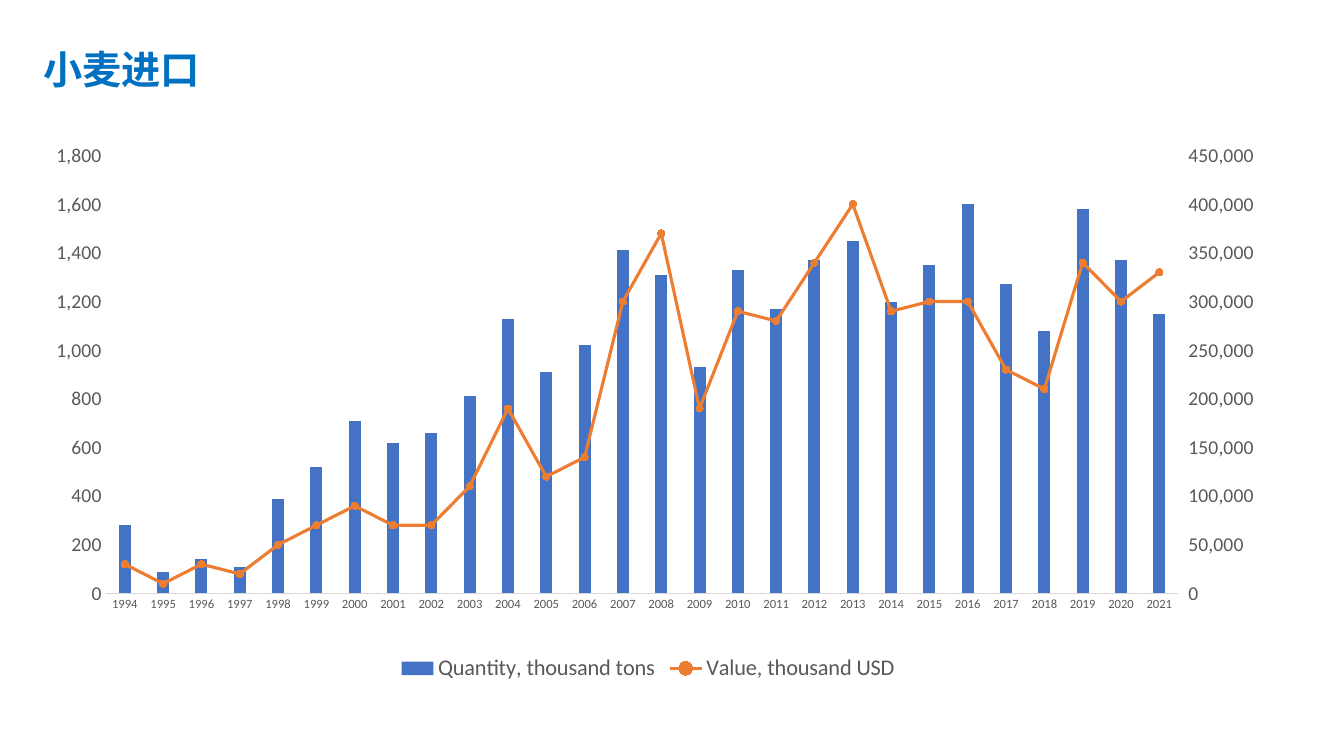
import copy

import pptx
import pptx.chart.axis
import pptx.chart.data
import pptx.dml.color
import pptx.enum.chart
import pptx.enum.text
import pptx.oxml
import pptx.oxml.ns
import pptx.util

Pt = pptx.util.Pt
qn = pptx.oxml.ns.qn
Tick = pptx.enum.chart.XL_TICK_MARK

YEARS = [str(year) for year in range(1994, 2022)]
TONS = [280, 90, 140, 110, 390, 520, 710, 620, 660, 810, 1130, 910, 1020, 1410,
        1310, 930, 1330, 1170, 1370, 1450, 1200, 1350, 1600, 1270, 1080, 1580,
        1370, 1150]
USD = [30000, 10000, 30000, 20000, 50000, 70000, 90000, 70000, 70000, 110000,
       190000, 120000, 140000, 300000, 370000, 190000, 290000, 280000, 340000,
       400000, 290000, 300000, 300000, 230000, 210000, 340000, 300000, 330000]


def rgb(code):
    return pptx.dml.color.RGBColor.from_string(code)


def assign(target, values):
    for name, value in values.items():
        setattr(target, name, value)


class ImportSlide:
    """Holds the style of the deck and the slide being built."""

    blue, orange, heading = "4472C4", "ED7D31", "0070C0"
    grey, rule = "595959", "D9D9D9"
    latin, chinese = "Calibri", "Noto Sans CJK SC"

    def __init__(self, deck):
        self.slide = deck.slides.add_slide(deck.slide_layouts[5])

    def font(self, font, size, color, **extra):
        assign(font, {"size": Pt(size), "name": self.latin, **extra})
        font.color.rgb = rgb(color)

    def title(self, wording, left, top, width, height):
        heading = self.slide.shapes.title
        assign(heading, {"left": Pt(left), "top": Pt(top),
                         "width": Pt(width), "height": Pt(height)})
        frame = heading.text_frame
        frame.text = wording
        assign(frame, {"word_wrap": False,
                       "auto_size": pptx.enum.text.MSO_AUTO_SIZE.NONE,
                       "vertical_anchor": pptx.enum.text.MSO_ANCHOR.MIDDLE})
        frame.paragraphs[0].alignment = pptx.enum.text.PP_ALIGN.LEFT
        run = frame.paragraphs[0].runs[0]
        self.font(run.font, 28, self.heading, name=self.chinese, bold=True)
        east_asian = pptx.oxml.parse_xml(
            f'<a:ea {pptx.oxml.ns.nsdecls("a")} typeface="{self.chinese}"/>')
        run._r.get_or_add_rPr().append(east_asian)

    def chart(self, bars, line, left, top, width, height):
        data = pptx.chart.data.CategoryChartData(number_format="#,##0")
        data.categories = YEARS
        for name, values in (bars, line):
            data.add_series(name, values)
        chart = self.slide.shapes.add_chart(
            pptx.enum.chart.XL_CHART_TYPE.COLUMN_CLUSTERED,
            Pt(left), Pt(top), Pt(width), Pt(height), data).chart
        assign(chart, {"has_title": False, "has_legend": True})
        self.font(chart.font, 10, "000000")
        assign(chart.legend, {
            "position": pptx.enum.chart.XL_LEGEND_POSITION.BOTTOM,
            "include_in_layout": False})
        self.font(chart.legend.font, 16, self.grey)
        self.year_axis(chart.category_axis)
        self.amount_axis(chart.value_axis, 1800, 200, Tick.NONE)
        plot_area = chart.element.find(".//" + qn("c:plotArea"))
        self.split_line(plot_area)
        self.place_plot(plot_area, x=0.05, y=0.03, w=0.89, h=0.8)
        columns, trend = chart.plots
        assign(columns, {"gap_width": 219, "overlap": -27,
                         "vary_by_categories": False})
        self.fill(columns.series[0].format, self.blue)
        self.trend(trend.series[0])

    def fill(self, target, color):
        target.fill.solid()
        target.fill.fore_color.rgb = rgb(color)

    def stroke(self, target, color, width):
        target.line.color.rgb = rgb(color)
        target.line.width = Pt(width)

    def year_axis(self, axis):
        assign(axis, {"major_tick_mark": Tick.NONE, "minor_tick_mark": Tick.NONE,
                      "has_major_gridlines": False})
        self.font(axis.tick_labels.font, 9, self.grey)
        self.stroke(axis.format, self.rule, 0.75)

    def amount_axis(self, axis, top, step, tick):
        assign(axis, {"minimum_scale": 0, "maximum_scale": top,
                      "major_unit": step, "major_tick_mark": tick,
                      "minor_tick_mark": Tick.NONE,
                      "has_major_gridlines": False})
        assign(axis.tick_labels, {"number_format": "#,##0",
                                  "number_format_is_linked": False})
        self.font(axis.tick_labels.font, 14, self.grey)
        axis.format.line.fill.background()

    def split_line(self, plot_area):
        years, amounts = (plot_area.find(qn(tag)) for tag in ("c:catAx", "c:valAx"))
        hidden_years, usd = copy.deepcopy(years), copy.deepcopy(amounts)
        amounts.addnext(usd)
        usd.addnext(hidden_years)
        for axis, settings in (
                (hidden_years, {"axId": "5001", "crossAx": "5002", "delete": "1"}),
                (usd, {"axId": "5002", "crossAx": "5001", "axPos": "r",
                       "crosses": "max"})):
            for tag, value in settings.items():
                axis.find(qn("c:" + tag)).set("val", value)
        self.amount_axis(pptx.chart.axis.ValueAxis(usd), 450000, 50000, Tick.OUTSIDE)
        line_chart = pptx.oxml.parse_xml(
            f'<c:lineChart {pptx.oxml.ns.nsdecls("c")}>'
            '<c:grouping val="stacked"/><c:varyColors val="0"/>'
            '<c:marker val="1"/><c:axId val="5001"/><c:axId val="5002"/>'
            '</c:lineChart>')
        bar_chart = plot_area.find(qn("c:barChart"))
        bar_chart.addnext(line_chart)
        value_series = bar_chart.findall(qn("c:ser"))[1]
        for bar_only in value_series.findall(qn("c:invertIfNegative")):
            value_series.remove(bar_only)
        line_chart.insert(2, value_series)

    def place_plot(self, plot_area, **box):
        for old in plot_area.findall(qn("c:layout")):
            plot_area.remove(old)
        modes = "".join(f'<c:{side}Mode val="edge"/>' for side in "xy")
        sizes = "".join(f'<c:{side} val="{size}"/>' for side, size in box.items())
        plot_area.insert(0, pptx.oxml.parse_xml(
            f'<c:layout {pptx.oxml.ns.nsdecls("c")}><c:manualLayout>'
            f'<c:layoutTarget val="inner"/>{modes}{sizes}'
            '</c:manualLayout></c:layout>'))

    def trend(self, series):
        series.smooth = False
        self.stroke(series.format, self.orange, 2.25)
        assign(series.marker, {
            "style": pptx.enum.chart.XL_MARKER_STYLE.CIRCLE, "size": 5})
        self.fill(series.marker.format, self.orange)
        self.stroke(series.marker.format, self.orange, 0.75)


def main():
    deck = pptx.Presentation()
    assign(deck, {"slide_width": Pt(960), "slide_height": Pt(540)})
    wheat = ImportSlide(deck)
    wheat.title("小麦进口", 23.8, 28.8, 203, 41)
    wheat.chart(("Quantity, thousand tons", TONS), ("Value, thousand USD", USD),
                32.4, 99.4, 863.3, 391)
    deck.save("out.pptx")


if __name__ == "__main__":
    main()
